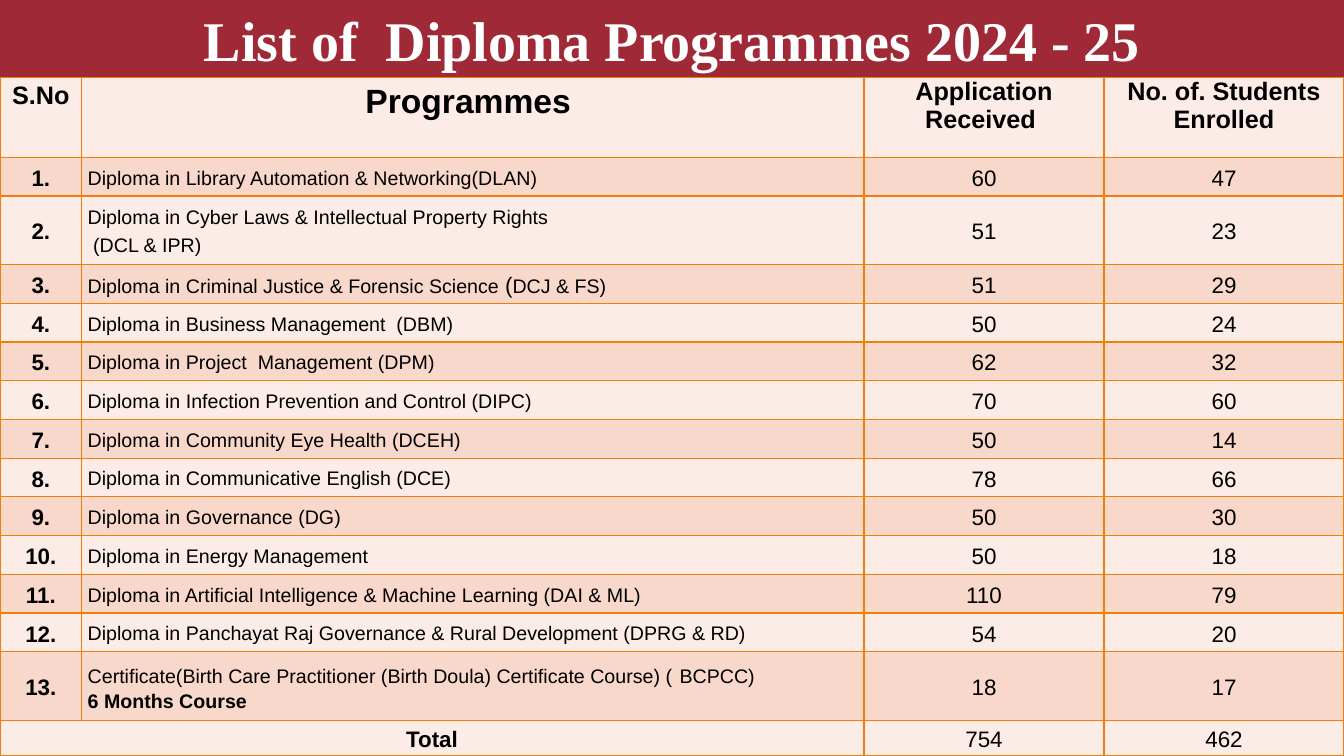
from dataclasses import dataclass

from lxml import etree
from pptx import Presentation
from pptx import util as u
from pptx.dml.color import RGBColor
from pptx.enum import text
from pptx.oxml.ns import qn


@dataclass(frozen=True)
class Theme:
    banner: str = "9F2936"
    banner_text: str = "FFFFFF"
    ink: str = "000000"
    border: str = "F07F09"
    bands: tuple = ("FCECE7", "F9D8CC")
    title_font: str = "Times New Roman"
    table_font: str = "Arial"
    title_size: int = 40
    programmes_size: int = 24
    heading_size: int = 18
    figure_size: int = 16
    programme_size: int = 14


THEME = Theme()
SLIDE_WIDTH, SLIDE_HEIGHT, BANNER_HEIGHT = 13.33, 7.5, 0.77
COLUMN_WIDTHS = (0.81, 7.76, 2.38, 2.38)
HEADING_HEIGHT, TWO_LINE_HEIGHT, TOTAL_HEIGHT = 0.79, 0.68, 0.35
LINE_SPACING = 1.15

# Heading, type size, line spacing
HEADINGS = (
    ("S.No", THEME.heading_size, LINE_SPACING),
    ("Programmes ", THEME.programmes_size, LINE_SPACING),
    ("Application Received ", THEME.heading_size, 1.0),
    ("No. of. Students Enrolled", THEME.heading_size, 1.0),
)

# Lines of the programme name, applications, enrolled; text between bars is larger
PROGRAMMES = (
    (["Diploma in Library Automation & Networking(DLAN)"], 60, 47),
    (["Diploma in Cyber Laws & Intellectual Property Rights", " (DCL & IPR)| |"], 51, 23),
    (["Diploma in Criminal Justice & Forensic Science |(|DCJ & FS)"], 51, 29),
    (["Diploma in Business Management  (DBM)"], 50, 24),
    (["Diploma in Project  Management (DPM)"], 62, 32),
    (["Diploma in Infection Prevention and Control (DIPC)"], 70, 60),
    (["Diploma in Community Eye Health (DCEH)"], 50, 14),
    (["Diploma in Communicative English (DCE)"], 78, 66),
    (["Diploma in Governance (DG)"], 50, 30),
    (["Diploma in Energy Management"], 50, 18),
    (["Diploma in Artificial Intelligence & Machine Learning (DAI & ML)"], 110, 79),
    (["Diploma in Panchayat Raj Governance & Rural Development (DPRG & RD)"], 54, 20),
    (["Certificate(Birth Care Practitioner (Birth Doula) Certificate Course) (| |BCPCC)",
      "6 Months Course"], 18, 17),
)
BOLD_LINE = "6 Months Course"


def set_font(font, size, color=THEME.ink, name=THEME.table_font, bold=False):
    font.size = u.Pt(size)
    font.color.rgb = RGBColor.from_string(color)
    font.name = name
    font.bold = bold


def add_banner(slide, wording):
    banner = slide.shapes.title
    banner.left = banner.top = u.Inches(0)
    banner.width, banner.height = u.Inches(SLIDE_WIDTH), u.Inches(BANNER_HEIGHT)
    banner.fill.solid()
    banner.fill.fore_color.rgb = RGBColor.from_string(THEME.banner)
    frame = banner.text_frame
    frame.text = wording
    frame.auto_size = text.MSO_AUTO_SIZE.NONE
    frame.vertical_anchor = text.MSO_ANCHOR.MIDDLE
    heading = frame.paragraphs[0]
    heading.alignment = text.PP_ALIGN.CENTER
    set_font(heading.font, THEME.title_size, THEME.banner_text, THEME.title_font, True)


def style_cell(cell, band):
    """Set margins, borders and band fill; borders must precede the fill."""
    cell.margin_left = cell.margin_right = u.Inches(0.06)
    cell.margin_top = cell.margin_bottom = 0
    properties = cell._tc.get_or_add_tcPr()
    for side in ("a:lnL", "a:lnR", "a:lnT", "a:lnB"):
        edge = etree.SubElement(properties, qn(side), w=str(u.Pt(1)))
        fill = etree.SubElement(edge, qn("a:solidFill"))
        etree.SubElement(fill, qn("a:srgbClr"), val=THEME.border)
    cell.fill.solid()
    cell.fill.fore_color.rgb = RGBColor.from_string(band)


def write_centred(cell, wording, size=THEME.figure_size, bold=False, spacing=LINE_SPACING):
    cell.text = str(wording)
    line = cell.text_frame.paragraphs[0]
    line.alignment = text.PP_ALIGN.CENTER
    line.line_spacing = spacing
    set_font(line.font, size, bold=bold)


def write_programme(cell, lines):
    frame = cell.text_frame
    for index, wording in enumerate(lines):
        line = frame.paragraphs[0] if index == 0 else frame.add_paragraph()
        line.line_spacing = LINE_SPACING
        set_font(line.font, THEME.programme_size, bold=wording == BOLD_LINE)
        for position, part in enumerate(wording.split("|")):
            if part:
                run = line.add_run()
                run.text = part
                larger = position % 2 == 1
                size = THEME.figure_size if larger else THEME.programme_size
                set_font(run.font, size, bold=wording == BOLD_LINE)


def row_heights(table_height):
    """Share what the taller rows leave equally among the one-line programmes."""
    doubles = sum(len(lines) > 1 for lines, _, _ in PROGRAMMES)
    left = table_height - HEADING_HEIGHT - TOTAL_HEIGHT - doubles * TWO_LINE_HEIGHT
    single = left / (len(PROGRAMMES) - doubles)
    body = [TWO_LINE_HEIGHT if len(lines) > 1 else single for lines, _, _ in PROGRAMMES]
    return [HEADING_HEIGHT, *body, TOTAL_HEIGHT]


def add_programme_table(slide):
    height = SLIDE_HEIGHT - BANNER_HEIGHT
    table = slide.shapes.add_table(
        len(PROGRAMMES) + 2, len(COLUMN_WIDTHS), u.Inches(0), u.Inches(BANNER_HEIGHT),
        u.Inches(SLIDE_WIDTH), u.Inches(height)).table
    table.first_row = table.horz_banding = False
    for column, width in zip(table.columns, COLUMN_WIDTHS):
        column.width = u.Inches(width)
    for index, (row, row_height) in enumerate(zip(table.rows, row_heights(height))):
        row.height = u.Inches(row_height)
        for cell in row.cells:
            style_cell(cell, THEME.bands[index % 2])
            if index > 0:
                cell.vertical_anchor = text.MSO_ANCHOR.MIDDLE

    for column, (heading, size, spacing) in enumerate(HEADINGS):
        write_centred(table.cell(0, column), heading, size, True, spacing)
    for number, (lines, applications, enrolled) in enumerate(PROGRAMMES, start=1):
        write_centred(table.cell(number, 0), f"{number}.", bold=True)
        write_programme(table.cell(number, 1), lines)
        write_centred(table.cell(number, 2), applications)
        write_centred(table.cell(number, 3), enrolled)

    total = len(PROGRAMMES) + 1
    table.cell(total, 0).merge(table.cell(total, 1))
    write_centred(table.cell(total, 0), "Total", bold=True)
    write_centred(table.cell(total, 2), sum(row[1] for row in PROGRAMMES))
    write_centred(table.cell(total, 3), 462)


def main():
    deck = Presentation()
    deck.slide_width, deck.slide_height = u.Inches(SLIDE_WIDTH), u.Inches(SLIDE_HEIGHT)
    slide = deck.slides.add_slide(deck.slide_layouts.get_by_name("Title Only"))
    add_banner(slide, "List of  Diploma Programmes 2024 - 25")
    add_programme_table(slide)
    deck.save("out.pptx")


if __name__ == "__main__":
    main()
